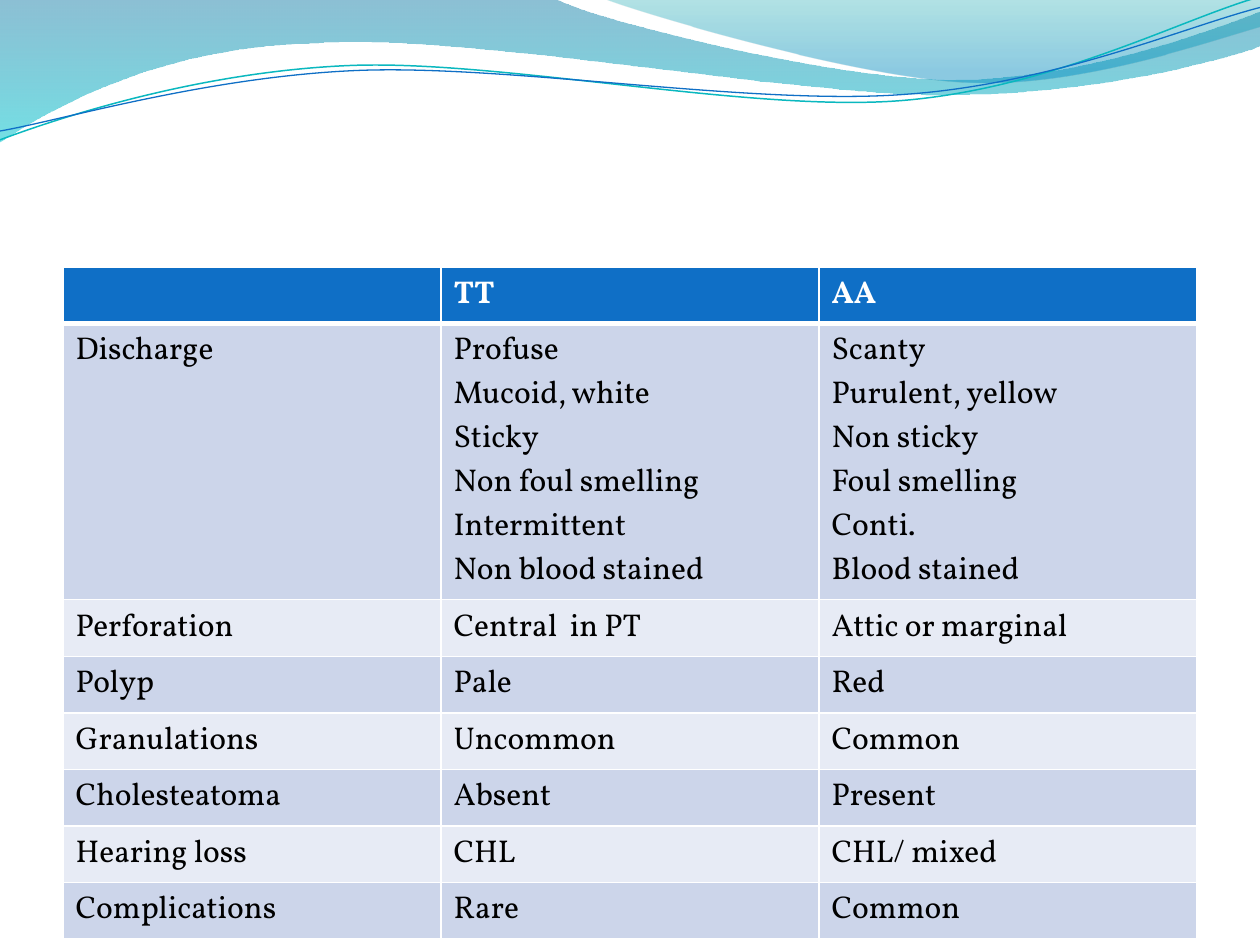
import math

from pptx import Presentation
from pptx.dml.color import RGBColor
from pptx.oxml import parse_xml
from pptx.oxml.ns import nsdecls
from pptx.util import Inches, Pt

FONT = "Vollkorn"
WHITE, BLACK, BLUE = "FFFFFF", "000000", "0F6FC6"
BANDS = ["CCD5EA", "E7EBF5"]

ROWS = [
    ("", "TT", "AA"),
    ("Discharge",
     "Profuse\nMucoid, white\nSticky\nNon foul smelling\nIntermittent\nNon blood stained",
     "Scanty\nPurulent, yellow\nNon sticky\nFoul smelling\nConti.\nBlood stained"),
    ("Perforation", "Central  in PT", "Attic or marginal"),
    ("Polyp", "Pale", "Red"),
    ("Granulations", "Uncommon", "Common"),
    ("Cholesteatoma", "Absent", "Present"),
    ("Hearing loss", "CHL", "CHL/ mixed"),
    ("Complications", "Rare", "Common"),
]

# Outlines in inches: a pair is a straight step, six numbers are a Bezier step.
# Gradient stops: position in percent, colour, opacity in percent.
WAVES = [
    ([(0, 0), (4.4, -0.01), (4.76, 0.17, 6.64, 0.63, 7.58, 0.63),
      (8.53, 0.63, 9.58, 0.26, 10, 0.09), (10.01, 0.36),
      (9.83, 0.44, 8.7, 0.76, 7.46, 0.75), (6.22, 0.75, 3.82, 0.28, 2.57, 0.34),
      (1.29, 0.36, 0.46, 0.83, -0.01, 1.13), (0, 0)],
     [(0, "0074A1", 45), (100, "00C6CF", 55)]),
    ([(4.79, -0.01), (5.09, 0.11, 6.82, 0.62, 7.69, 0.65),
      (8.56, 0.69, 9.61, 0.32, 10, 0.21), (10, 0), (4.79, -0.01)],
     [(0, "00A1A9", 30), (80, "008BBF", 45)]),
]
# Each curve: steps as seen on the slide, centre of its tilted box, colour, width.
TILT = -2.7
CURVES = [
    ([(0, 1.11), (0.48, 0.93, 1.58, 0.57, 2.77, 0.52),
      (3.95, 0.47, 5.93, 0.89, 7.13, 0.8), (8.33, 0.71, 9.38, 0.15, 9.98, -0.02)],
     (4.99, 0.58), "0AB8BF", 0.85),
    ([(0, 1.04), (0.47, 0.96, 1.64, 0.61, 2.83, 0.56),
      (4.03, 0.51, 5.97, 0.84, 7.17, 0.75), (8.36, 0.67, 9.41, 0.21, 10, 0.06)],
     (5, 0.59), BLUE, 0.75),
]


def rgb(code):
    return RGBColor.from_string(code)


def level(steps, mid):
    """Undo the tilt of steps about a centre."""
    cos, sin = math.cos(math.radians(-TILT)), math.sin(math.radians(-TILT))
    flat = []
    for step in steps:
        spots = []
        for x, y in zip(step[::2], step[1::2]):
            dx, dy = x - mid[0], y - mid[1]
            spots += [mid[0] + dx * cos - dy * sin, mid[1] + dx * sin + dy * cos]
        flat.append(tuple(spots))
    return flat


def draw(slide, steps, close):
    """Build a freeform, then join each three points of a Bezier step."""
    points = [(Inches(x), Inches(y)) for step in steps
              for x, y in zip(step[::2], step[1::2])]
    pen = slide.shapes.build_freeform(*points[0])
    pen.add_line_segments(points[1:], close=close)
    shape = pen.convert_to_shape()
    shape.shadow.inherit = False
    lines = iter(shape._element.xpath(".//a:lnTo"))
    for step in steps[1:]:
        line = next(lines)
        if len(step) == 6:
            bend = parse_xml(f'<a:cubicBezTo {nsdecls("a")}/>')
            line.addprevious(bend)
            for old in (line, next(lines), next(lines)):
                bend.append(old[0])
                old.getparent().remove(old)
    return shape


def shade(shape, stops):
    """Fill a shape from top to bottom with see-through colours."""
    marks = "".join(
        f'<a:gs pos="{pos * 1000}"><a:srgbClr val="{code}">'
        f'<a:alpha val="{alpha * 1000}"/></a:srgbClr></a:gs>'
        for pos, code, alpha in stops)
    grad = parse_xml(f'<a:gradFill {nsdecls("a")} rotWithShape="1"><a:gsLst>{marks}'
                     '</a:gsLst><a:lin ang="5400000" scaled="0"/></a:gradFill>')
    shape.line.fill.background()
    shape.line._ln.addprevious(grad)


def write(frame, words, size=18, color=BLACK, bold=False):
    frame.text = words
    for para in frame.paragraphs:
        for font in [para.font] + [run.font for run in para.runs]:
            font.name, font.size, font.bold = FONT, Pt(size), bold
            font.color.rgb = rgb(color)


def edge(cell, top, low):
    """Draw white cell borders; top and low are the widths above and below."""
    props = cell._tc.get_or_add_tcPr()
    for i, (side, width) in enumerate([("L", 1), ("R", 1), ("T", top), ("B", low)]):
        props.insert(i, parse_xml(
            f'<a:ln{side} {nsdecls("a")} w="{Pt(width)}"><a:solidFill>'
            f'<a:srgbClr val="{WHITE}"/></a:solidFill></a:ln{side}>'))


def main():
    deck = Presentation()
    deck.slide_width, deck.slide_height = Inches(10), Inches(7.5)
    slide = deck.slides.add_slide(deck.slide_layouts[6])

    for steps, stops in WAVES:
        shade(draw(slide, steps, True), stops)
    for steps, mid, color, width in CURVES:
        curve = draw(slide, level(steps, mid), False)
        curve.rotation = TILT
        curve.fill.background()
        curve.line.color.rgb = rgb(color)
        curve.line.width = Pt(width)

    high = 0.41
    table = slide.shapes.add_table(
        len(ROWS), 3, Inches(0.5), Inches(2.12),
        Inches(9), Inches(high * len(ROWS))).table
    for r, row in enumerate(ROWS):
        head = r == 0
        for c, words in enumerate(row):
            cell = table.cell(r, c)
            cell.fill.solid()
            cell.fill.fore_color.rgb = rgb(BLUE if head else BANDS[(r - 1) % 2])
            edge(cell, 3 if r == 1 else 1, 3 if head else 1)
            write(cell.text_frame, words, color=WHITE if head else BLACK, bold=head)

    deck.save("out.pptx")


if __name__ == "__main__":
    main()
